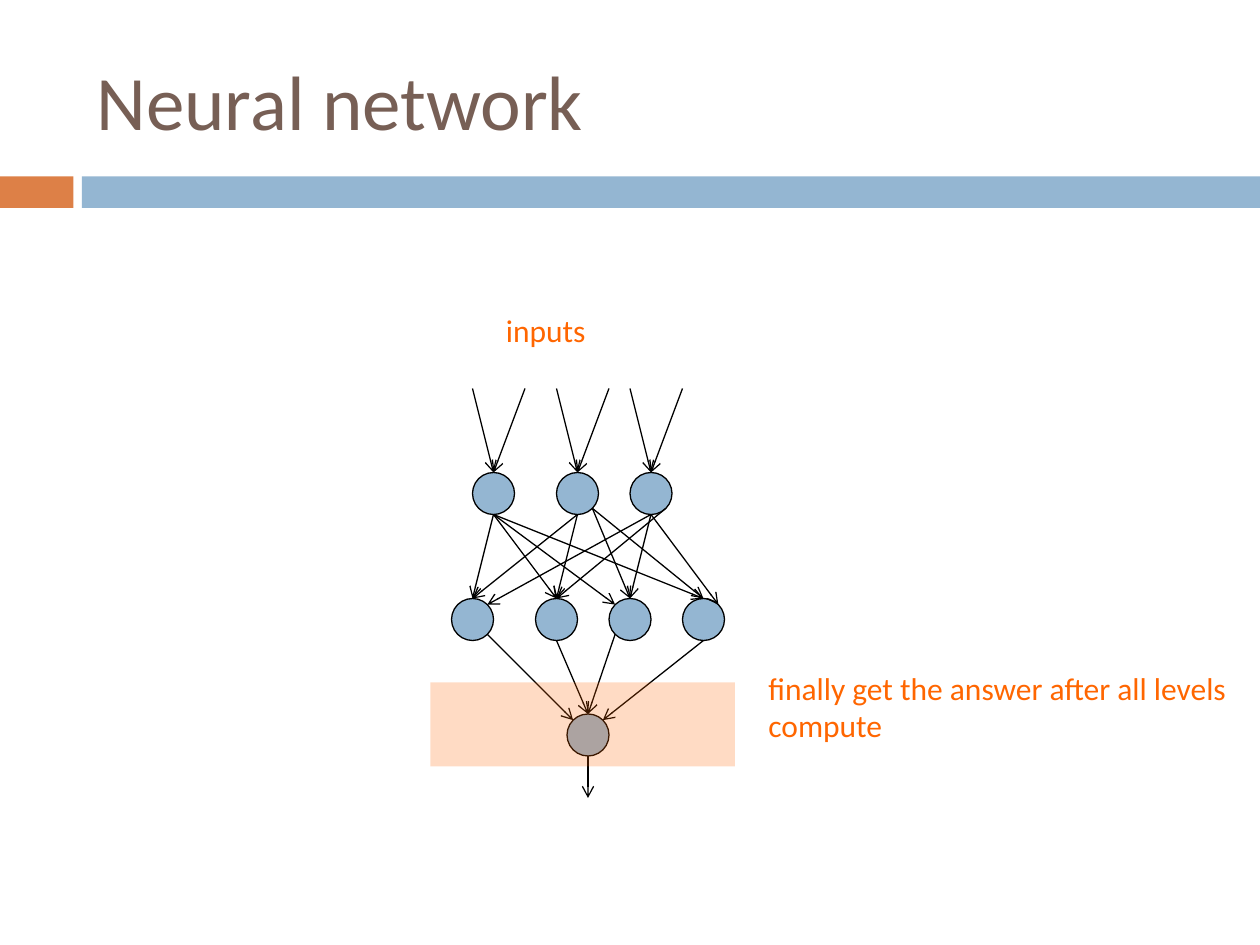
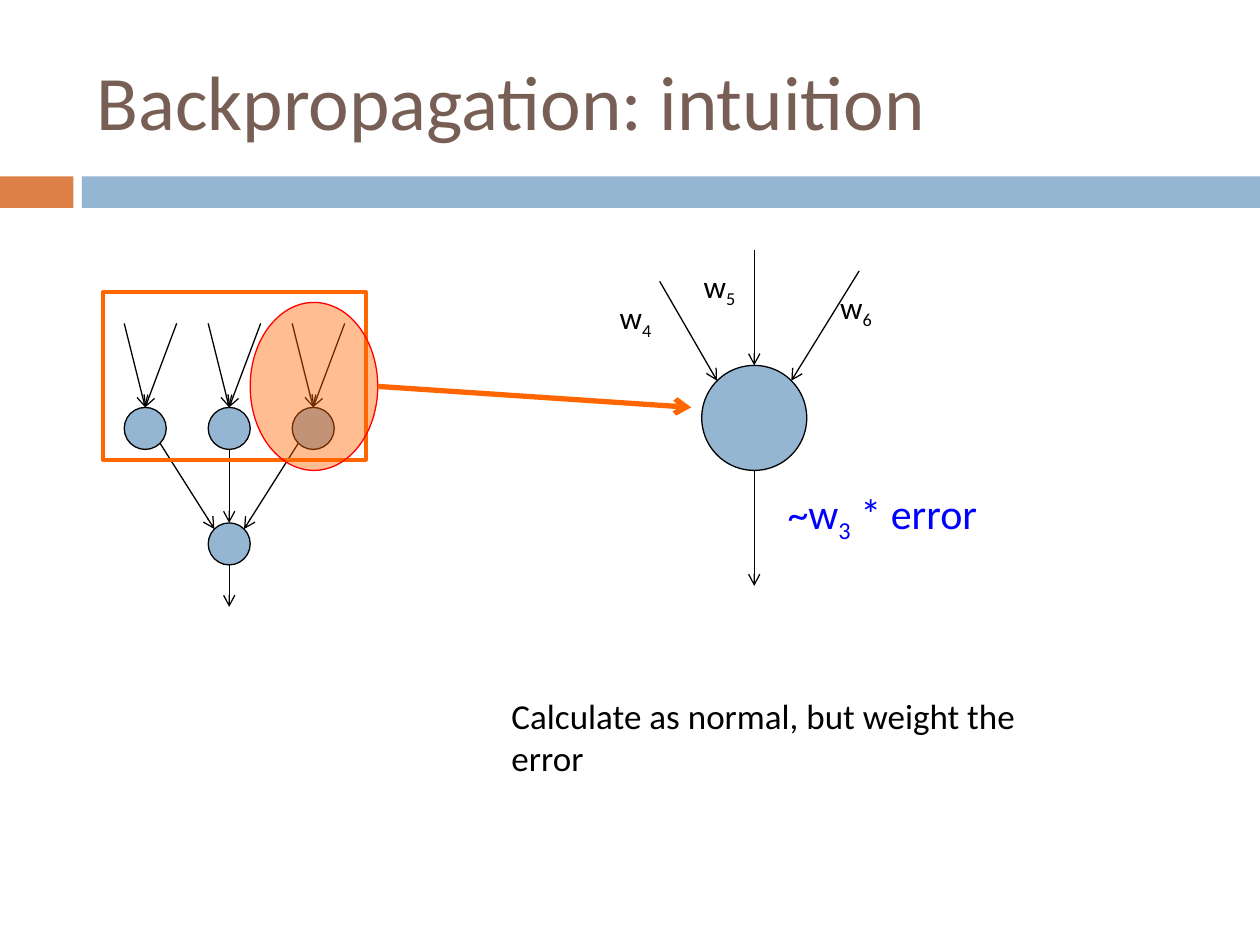
from dataclasses import dataclass
from math import sqrt

from lxml.etree import SubElement
from pptx import Presentation
from pptx.dml.color import RGBColor
from pptx.enum.shapes import MSO_CONNECTOR as Connector, MSO_SHAPE as Preset
from pptx.enum.text import MSO_ANCHOR as Anchor, PP_ALIGN as Align
from pptx.oxml.ns import qn
from pptx.util import Emu, Inches, Pt

COLUMNS, ROWS = 120, 90
TITLE_ONLY = 5
FONT = "Calibri"
BLACK, BROWN, BLUE = "000000", "775F55", "0000FF"
BAND_ORANGE, BAND_BLUE = "DD8047", "94B6D2"
ORANGE, RED = "FF6600", "FF0000"
DIRECTIONS = {
    "N": (0, -1), "NE": (1, -1), "SE": (1, 1),
    "S": (0, 1), "SW": (-1, 1), "NW": (-1, -1),
}


def color(hex_string):
    return RGBColor.from_string(hex_string)


@dataclass
class Node:
    column: float
    row: float
    size: float = 4

    def port(self, direction):
        dx, dy = DIRECTIONS[direction]
        radius = self.size / 2
        reach = radius / sqrt(dx * dx + dy * dy)
        return self.column + radius + dx * reach, self.row + radius + dy * reach


class Deck:
    def __init__(self):
        self.presentation = Presentation()
        self.presentation.slide_width = Inches(10)
        self.presentation.slide_height = Inches(7.5)
        self.layout = self.presentation.slide_layouts[TITLE_ONLY]
        self.slide = None
        self.origin = (0, 0)

    def point(self, column, row):
        return self.extent(column + self.origin[0], row + self.origin[1])

    def extent(self, columns, rows):
        return (Emu(round(self.presentation.slide_width * columns / COLUMNS)),
                Emu(round(self.presentation.slide_height * rows / ROWS)))

    def add_slide(self, title, origin=(0, 0)):
        first = self.slide is None
        self.origin = (0, 0)
        self.slide = self.presentation.slides.add_slide(self.layout)
        if first:
            self.set_up_layout()
        self.origin = origin
        frame = self.slide.shapes.title.text_frame
        frame.vertical_anchor = Anchor.MIDDLE
        self.add_runs(frame, [title], 44, BROWN)

    def set_up_layout(self):
        placeholder = self.layout.placeholders[0]
        placeholder.left, placeholder.top = self.point(8, 3)
        placeholder.width, placeholder.height = self.extent(107, 13)
        for column, width, fill in ((0, 7, BAND_ORANGE), (7.8, 112.2, BAND_BLUE)):
            band = self.shape(Preset.RECTANGLE, column, 16.8, width, 3, fill)
            self.layout.shapes.element.append(band._element)

    def add_runs(self, frame, pieces, size, ink):
        paragraph = frame.paragraphs[0]
        paragraph.alignment = Align.LEFT
        for index, piece in enumerate(pieces):
            run = paragraph.add_run()
            run.text = piece
            run.font.name = FONT
            run.font.size = Pt(size)
            run.font.color.rgb = color(ink)
            if index % 2:
                run._r.get_or_add_rPr().set("baseline", "-25000")

    def text(self, column, row, width, height, pieces, size=18, ink=BLACK):
        box = self.slide.shapes.add_textbox(*self.point(column, row), *self.extent(width, height))
        box.text_frame.word_wrap = True
        self.add_runs(box.text_frame, pieces, size, ink)

    def shape(self, preset, column, row, width, height, fill=None, line=None, weight=0.75, opacity=100):
        shape = self.slide.shapes.add_shape(
            preset, *self.point(column, row), *self.extent(width, height))
        shape.shadow.inherit = False
        if fill:
            shape.fill.solid()
            shape.fill.fore_color.rgb = color(fill)
            if opacity < 100:
                tint = shape._element.spPr.find(f".//{qn('a:srgbClr')}")
                SubElement(tint, qn("a:alpha"), val=str(opacity * 1000))
        else:
            shape.fill.background()
        if line:
            shape.line.color.rgb = color(line)
            shape.line.width = Pt(weight)
        else:
            shape.line.fill.background()
        return shape

    def node(self, column, row, size=4):
        self.shape(Preset.OVAL, column, row, size, size, BAND_BLUE, BLACK)
        return Node(column, row, size)

    def layer(self, columns, row):
        return [self.node(column, row) for column in columns]

    def arrow(self, start, end, ink=BLACK, weight=0.75):
        connector = self.slide.shapes.add_connector(
            Connector.STRAIGHT, *self.point(*start), *self.point(*end))
        connector.line.color.rgb = color(ink)
        connector.line.width = Pt(weight)
        properties = connector._element.spPr
        SubElement(properties.find(qn("a:ln")), qn("a:tailEnd"), type="arrow")
        SubElement(properties, qn("a:effectLst"))

    def link(self, sources, targets, edges):
        for source, leaving, target, entering in edges:
            self.arrow(sources[source].port(leaving), targets[target].port(entering))

    def feed(self, nodes):
        for node in nodes:
            for offset in (0, 5):
                self.arrow((node.column + offset, node.row - 8), node.port("N"))

    def emit(self, node, length):
        column, row = node.port("S")
        self.arrow((column, row), (column, row + length))


def build_network(deck):
    deck.add_slide("Neural network")
    first_layer = deck.layer((45, 53, 60), 45)
    second_layer = deck.layer((43, 51, 58, 65), 57)
    answer = deck.node(54, 68)
    deck.feed(first_layer)
    deck.link(first_layer, second_layer, [
        (0, "S", 0, "N"), (0, "S", 1, "N"), (0, "S", 2, "NW"), (0, "S", 3, "N"),
        (1, "S", 0, "N"), (1, "S", 1, "N"), (1, "SE", 2, "N"), (1, "SE", 3, "N"),
        (2, "S", 0, "NE"), (2, "SE", 1, "N"), (2, "S", 2, "N"), (2, "S", 3, "NE"),
    ])
    deck.link(second_layer, [answer], [
        (0, "SE", 0, "NW"), (1, "S", 0, "N"), (2, "SW", 0, "N"), (3, "S", 0, "NE"),
    ])
    deck.emit(answer, 4)
    deck.text(47, 29, 22, 6, ["inputs"], ink=ORANGE)
    deck.shape(Preset.RECTANGLE, 41, 65, 29, 8, ORANGE, opacity=23)
    deck.text(72, 63.1, 46, 11, ["finally get the answer after all levels compute"], ink=ORANGE)


def build_backpropagation(deck):
    deck.add_slide("Backpropagation: intuition", origin=(-0.17, -0.2))
    hidden = deck.layer((12, 20, 28), 39)
    output = deck.node(20, 50)
    deck.link(hidden, [output], [(0, "SE", 0, "NW"), (1, "S", 0, "N"), (2, "SW", 0, "NE")])
    deck.feed(hidden)
    deck.emit(output, 4)
    deck.shape(Preset.RECTANGLE, 10, 28, 25, 16, line=ORANGE, weight=2.25)
    deck.shape(Preset.OVAL, 24, 29, 12.15, 16, ORANGE, RED, opacity=43)

    enlarged = deck.node(67, 35, 10)
    deck.emit(enlarged, 11)
    deck.text(74, 46, 23, 6, ["~w", "3", " * error"], 24, BLUE)
    for start, direction in (((63, 27), "NW"), ((72, 24), "N"), ((82, 26), "NE")):
        deck.arrow(start, enlarged.port(direction))
    for column, row, index in ((58, 28, "4"), (66, 25, "5"), (79, 27, "6")):
        deck.text(column, row, 8, 5, ["w", index])
    deck.arrow((36.15, 37), (66, 39), ORANGE, 3)
    deck.text(47.7, 65.8, 57, 5, ["Calculate as normal, but weight the error"], 20)


def main():
    deck = Deck()
    build_network(deck)
    build_backpropagation(deck)
    deck.presentation.save("out.pptx")


if __name__ == "__main__":
    main()
